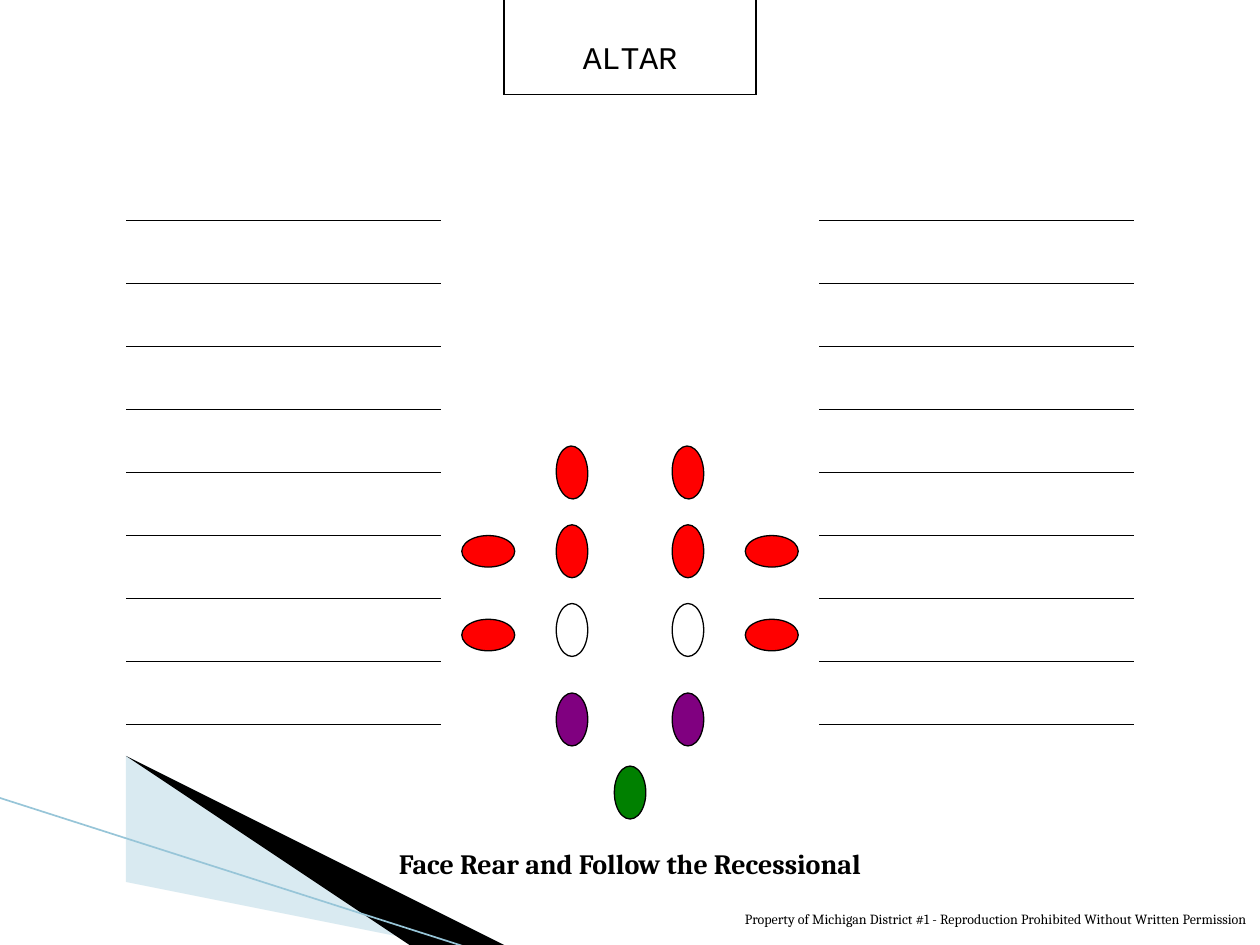
import dataclasses
import pptx
import pptx.dml.color
import pptx.enum.shapes
import pptx.enum.text
import pptx.oxml.ns
import pptx.util
import lxml.etree

Inches = pptx.util.Inches
Align = pptx.enum.text.PP_ALIGN
AutoSize = pptx.enum.text.MSO_AUTO_SIZE


@dataclasses.dataclass(frozen=True)
class Theme:
    black: str = "000000"
    white: str = "FFFFFF"
    red: str = "FF0000"
    purple: str = "800080"
    green: str = "008000"
    pale_blue: str = "A0CBDC"
    edge_blue: str = "97C5D8"
    serif: str = "Cambria"
    mono: str = "Courier New"
    altar_size: float = 18
    title_size: float = 16
    footer_size: float = 8
    line_width: float = 0.75
    edge_width: float = 0.95


THEME = Theme()
WIDTH, HEIGHT = 10, 7.5
CENTRE = WIDTH / 2
PEW_ROWS, PEW_TOP, PEW_GAP, PEW_LENGTH = 9, 1.75, 0.5, 2.5
MARK_LENGTH, MARK_WIDTH = 0.42, 0.25
INNER, OUTER = 0.46, 1.125  # distances of the files from the centre aisle


def rgb(value):
    return pptx.dml.color.RGBColor.from_string(value)


def add_line(slide, start, end, color=THEME.black, width=THEME.line_width):
    connector = slide.shapes.add_connector(
        pptx.enum.shapes.MSO_CONNECTOR.STRAIGHT,
        *(Inches(value) for value in (*start, *end)))
    connector.line.color.rgb = rgb(color)
    connector.line.width = pptx.util.Pt(width)
    properties = connector._element.spPr
    lxml.etree.SubElement(properties, pptx.oxml.ns.qn("a:effectLst"))


def add_wedge(slide, points, color, opacity=100):
    builder = slide.shapes.build_freeform(*points[0], scale=Inches(1))
    builder.add_line_segments(points[1:], close=True)
    shape = builder.convert_to_shape()
    shape.shadow.inherit = False
    shape.fill.solid()
    shape.fill.fore_color.rgb = rgb(color)
    shape.line.fill.background()
    if opacity < 100:
        tag = pptx.oxml.ns.qn("a:srgbClr")
        fill_color = next(shape._element.spPr.iter(tag))
        alpha = lxml.etree.SubElement(fill_color, pptx.oxml.ns.qn("a:alpha"))
        alpha.set("val", str(opacity * 1000))


def add_person(slide, centre_x, centre_y, color, rotation):
    shape = slide.shapes.add_shape(
        pptx.enum.shapes.MSO_SHAPE.OVAL,
        Inches(centre_x - MARK_LENGTH / 2), Inches(centre_y - MARK_WIDTH / 2),
        Inches(MARK_LENGTH), Inches(MARK_WIDTH))
    shape.rotation = rotation
    shape.shadow.inherit = False
    shape.fill.solid()
    shape.fill.fore_color.rgb = rgb(color)
    shape.line.color.rgb = rgb(THEME.black)
    shape.line.width = pptx.util.Pt(THEME.line_width)


def set_text(shape, box, text, alignment, auto_size, **font_values):
    for name, value in zip(("left", "top", "width", "height"), box):
        setattr(shape, name, Inches(value))
    frame = shape.text_frame
    frame.text = text
    frame_values = {
        "word_wrap": True,
        "auto_size": auto_size,
        "vertical_anchor": pptx.enum.text.MSO_ANCHOR.TOP,
    }
    for name, value in frame_values.items():
        setattr(frame, name, value)
    paragraph = frame.paragraphs[0]
    paragraph.alignment = alignment
    paragraph.space_before = pptx.util.Pt(0)
    font = paragraph.runs[0].font
    for name, value in font_values.items():
        setattr(font, name, value)
    font.color.rgb = rgb(THEME.black)


def add_label(slide, box, *arguments, **font_values):
    shape = slide.shapes.add_textbox(0, 0, Inches(1), Inches(1))
    set_text(shape, box, *arguments, **font_values)


def add_corner(slide):
    add_wedge(slide, [(0.55, 6.51), (5.95, 7.51), (4.56, 7.51), (0.55, 6.5)],
              THEME.pale_blue, opacity=40)
    add_wedge(slide, [(0.53, 6.49), (4.57, 7.51), (3.72, 7.52), (0.54, 6.5)],
              THEME.black)
    add_line(slide, (-0.01, 6.33), (3.71, 7.52),
             THEME.edge_blue, THEME.edge_width)


def add_altar(slide):
    left, right, front = CENTRE - 1, CENTRE + 1, HEIGHT / 10
    add_line(slide, (left, front), (right, front))
    add_line(slide, (left, front), (left, 0))
    add_line(slide, (right, front), (right, 0))
    add_label(slide, (4.29, 0.25, 1.42, 0.4), "ALTAR", Align.CENTER,
              AutoSize.SHAPE_TO_FIT_TEXT, name=THEME.mono,
              size=pptx.util.Pt(THEME.altar_size))


def add_pews(slide):
    for left in (1, WIDTH - 1 - PEW_LENGTH):
        for row in range(PEW_ROWS):
            y = PEW_TOP + row * PEW_GAP
            add_line(slide, (left, y), (left + PEW_LENGTH, y))


def add_people(slide):
    # Distance from the aisle, height on the slide, colour, rotation
    pairs = [
        (INNER, 3.75, THEME.red, 267.6),
        (INNER, 4.375, THEME.red, 270),
        (INNER, 5, THEME.white, 270),
        (INNER, 5.71, THEME.purple, 270),
        (OUTER, 4.375, THEME.red, 180),
        (OUTER, 5.04, THEME.red, 0),
    ]
    for offset, y, color, rotation in pairs:
        for side in (-1, 1):
            add_person(slide, CENTRE + side * offset, y, color, rotation)
    add_person(slide, CENTRE, 6.29, THEME.green, 90)


def main():
    presentation = pptx.Presentation()
    presentation.slide_width = Inches(WIDTH)
    presentation.slide_height = Inches(HEIGHT)
    slide = presentation.slides.add_slide(presentation.slide_layouts[5])

    # Room plan
    add_corner(slide)
    add_altar(slide)
    add_pews(slide)
    add_people(slide)

    # Title and footer
    set_text(slide.shapes.title, (1, 6.67, 8, 0.37),
             "Face Rear and Follow the Recessional", Align.CENTER,
             AutoSize.SHAPE_TO_FIT_TEXT, name=THEME.serif, bold=True,
             size=pptx.util.Pt(THEME.title_size))
    add_label(slide, (5.33, 7.18, 4.67, 0.32),
              "Property of Michigan District #1 - Reproduction Prohibited "
              "Without Written Permission", Align.RIGHT, AutoSize.NONE,
              name=THEME.serif, size=pptx.util.Pt(THEME.footer_size))
    presentation.save("out.pptx")


if __name__ == "__main__":
    main()
